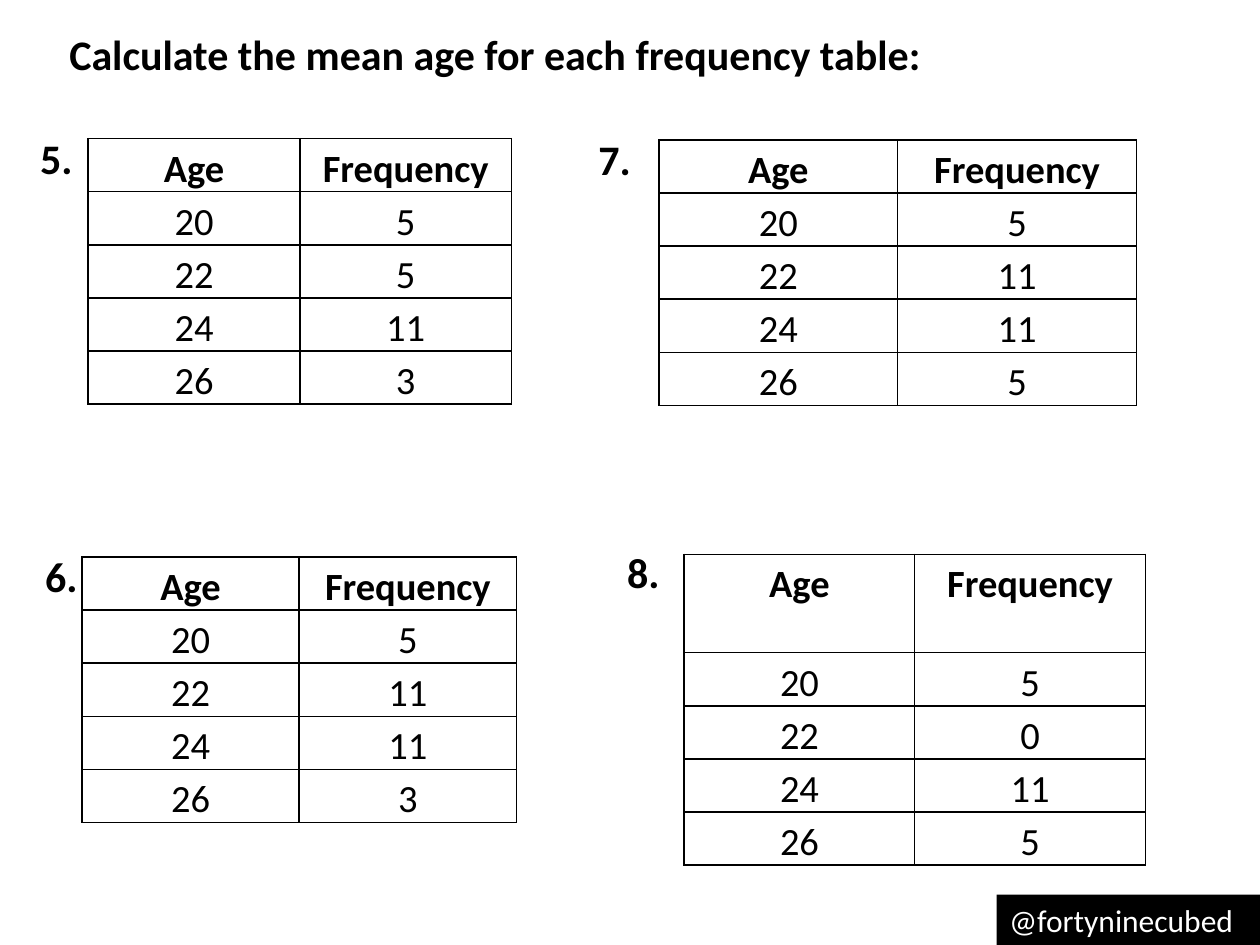
from dataclasses import dataclass

from lxml.etree import SubElement as Sub
from pptx import Presentation
from pptx.dml.color import RGBColor as RGB
from pptx.enum.shapes import MSO_SHAPE as Shape
from pptx.enum.text import MSO_ANCHOR as Anchor, MSO_AUTO_SIZE as Auto, PP_ALIGN as Align
from pptx.oxml.ns import qn
from pptx.util import Inches, Pt


@dataclass
class Theme:
    face: str = "Calibri"
    ink: RGB = RGB(0, 0, 0)
    paper: RGB = RGB(255, 255, 255)
    head: int = 24
    body: int = 22
    tag: int = 18
    rule: int = 1


theme = Theme()


def write(frame, text, size, color, bold=False, align=Align.LEFT):
    frame.text = text
    frame.word_wrap = True
    line = frame.paragraphs[0]
    line.alignment = align
    font = line.font
    font.name, font.size, font.bold = theme.face, Pt(size), bold
    font.color.rgb = color
    return line


def outline(cell):
    props = cell._tc.get_or_add_tcPr()
    for side in ("lnL", "lnR", "lnT", "lnB"):
        edge = Sub(props, qn(f"a:{side}"), w=str(Pt(theme.rule)))
        fill = Sub(edge, qn("a:solidFill"))
        Sub(fill, qn("a:srgbClr"), val=str(theme.ink))
    cell.fill.background()


deck = Presentation()
deck.slide_width, deck.slide_height = Inches(10), Inches(7.5)
slide = deck.slides.add_slide(deck.slide_layouts[5])

title = slide.shapes.title
title.left, title.top = Inches(0.45), Inches(0.18)
title.width, title.height = Inches(8.54), Inches(0.5)
write(title.text_frame, "Calculate the mean age for each frequency table:",
      theme.head, theme.ink, True)
title.text_frame.vertical_anchor = Anchor.TOP
title.text_frame.auto_size = Auto.SHAPE_TO_FIT_TEXT

bar = slide.shapes.add_shape(
    Shape.RECTANGLE, Inches(7.91), Inches(7.1), Inches(2.09), Inches(0.4))
bar.shadow.inherit = False
bar.fill.solid()
bar.fill.fore_color.rgb = theme.ink
bar.line.fill.background()
write(bar.text_frame, "@fortyninecubed", theme.tag, theme.paper)
bar.text_frame.vertical_anchor = Anchor.TOP

ages = (20, 22, 24, 26)
row = 0.42
tasks = (
    ("5.", (0.22, 1), (0.7, 1.1), 3.36, row, (5, 5, 11, 3)),
    ("6.", (0.26, 4.32), (0.65, 4.42), 3.45, row, (5, 11, 11, 3)),
    ("7.", (4.65, 1.01), (5.23, 1.11), 3.79, row, (5, 11, 11, 5)),
    ("8.", (4.88, 4.29), (5.43, 4.4), 3.66, 0.78, (5, 0, 11, 5)),
)

for label, spot, place, width, top, counts in tasks:
    box = slide.shapes.add_textbox(*map(Inches, spot), Inches(0.56), Inches(0.5))
    write(box.text_frame, label, theme.head, theme.ink, True)
    box.text_frame.auto_size = Auto.SHAPE_TO_FIT_TEXT

    data = [("Age", "Frequency"), *zip(ages, counts)]
    high = top + row * len(ages)
    grid = slide.shapes.add_table(
        len(data), 2, *map(Inches, place), Inches(width), Inches(high)).table
    grid.first_row = grid.horz_banding = False
    for r, pair in enumerate(data):
        grid.rows[r].height = Inches(row if r else top)
        for c, value in enumerate(pair):
            cell = grid.cell(r, c)
            cell.margin_left = cell.margin_right = Inches(0.07)
            cell.margin_top = cell.margin_bottom = 0
            line = write(cell.text_frame, str(value), theme.body, theme.ink,
                         r == 0, Align.CENTER)
            line.line_spacing = 1.15
            outline(cell)

deck.save("out.pptx")
